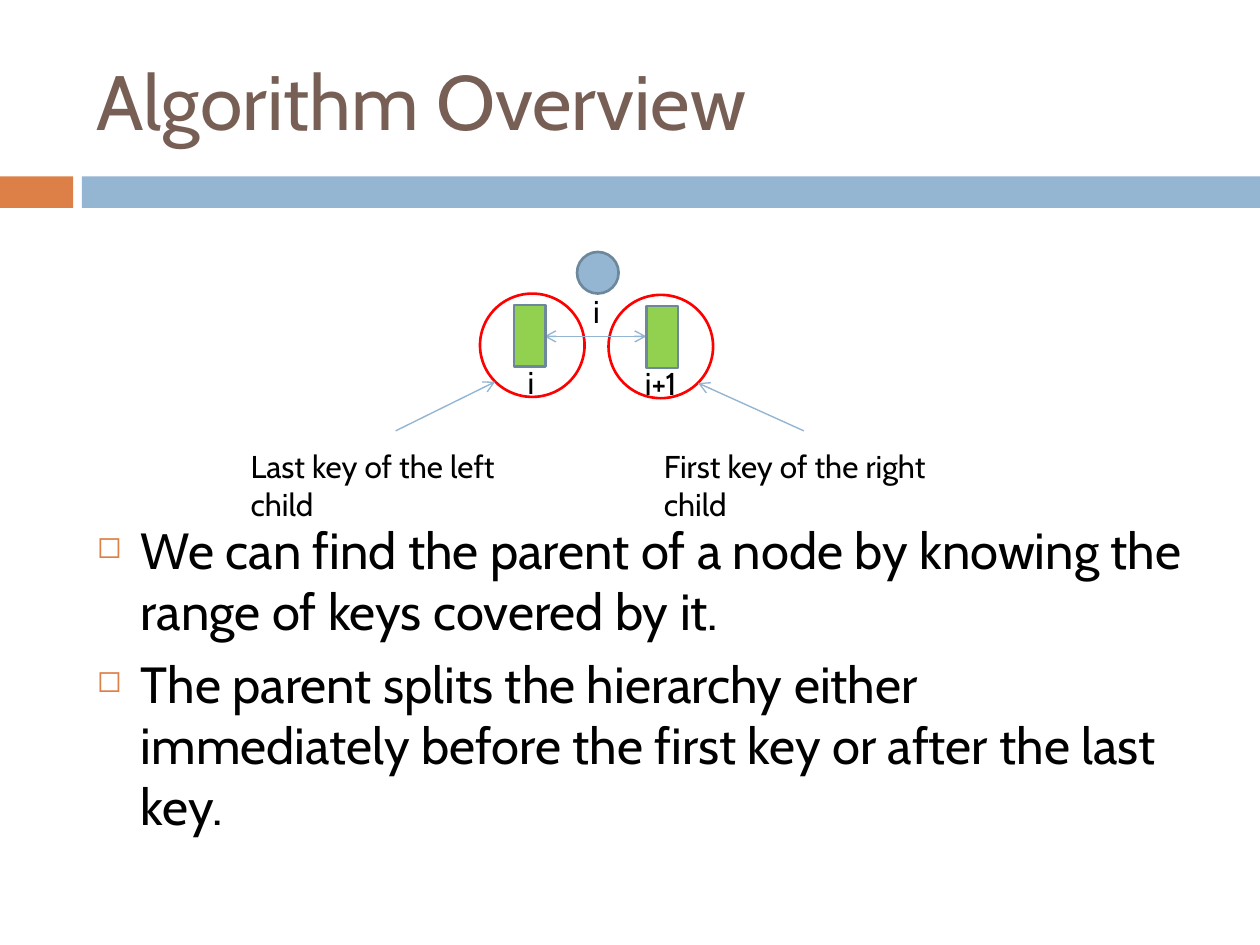
from typing import NamedTuple, Optional

from lxml import etree
from pptx import Presentation
from pptx.dml.color import RGBColor
from pptx.enum import shapes, text
from pptx.oxml.ns import qn
from pptx.util import Inches, Pt

ORANGE = RGBColor(0xDD, 0x80, 0x47)
BLUE = RGBColor(0x94, 0xB6, 0xD2)
SLATE = RGBColor(0x6D, 0x87, 0x9B)
GREEN = RGBColor(0x92, 0xD0, 0x50)
RED = RGBColor(0xFF, 0x00, 0x00)
BROWN = RGBColor(0x77, 0x5F, 0x55)
BLACK = RGBColor(0x00, 0x00, 0x00)

FONT = "Cabin"
RECT = shapes.MSO_SHAPE.RECTANGLE
OVAL = shapes.MSO_SHAPE.OVAL


class Box(NamedTuple):
    left: float
    top: float
    width: float
    height: float


class Figure(NamedTuple):
    kind: shapes.MSO_SHAPE
    box: Box
    fill: Optional[RGBColor] = None
    outline: Optional[RGBColor] = None


class Arrow(NamedTuple):
    start: tuple[float, float]
    end: tuple[float, float]
    ends: tuple[str, ...] = ("tailEnd",)


class Label(NamedTuple):
    words: str
    box: Box
    wrap: bool = False


BANDS = [
    Figure(RECT, Box(0, 1.4, 0.58, 0.25), fill=ORANGE),
    Figure(RECT, Box(0.65, 1.4, 9.35, 0.25), fill=BLUE),
]
KEY_RINGS = [
    Figure(OVAL, Box(3.81, 2.33, 0.83, 0.82), outline=RED),
    Figure(OVAL, Box(4.83, 2.34, 0.83, 0.82), outline=RED),
]
NODES = [
    Figure(OVAL, Box(4.58, 2, 0.33, 0.33), BLUE, SLATE),
    Figure(RECT, Box(4.08, 2.42, 0.25, 0.49), GREEN, SLATE),
    Figure(RECT, Box(5.13, 2.43, 0.25, 0.49), GREEN, SLATE),
]
ARROWS = [
    Arrow((3.14, 3.42), (3.93, 3.03)),
    Arrow((6.38, 3.42), (5.54, 3.04)),
    Arrow((4.32, 2.67), (5.13, 2.67), ("headEnd", "tailEnd")),
]
LABELS = [
    Label("Last key of the left child", Box(1.89, 3.5, 2.61, 0.4), wrap=True),
    Label("First key of the right child", Box(5.17, 3.5, 2.75, 0.4), wrap=True),
    Label("i", Box(4.09, 2.83, 0.26, 0.4)),
    Label("i+1", Box(5.02, 2.84, 0.56, 0.4)),
]
PARENT_LABEL = Label("i", Box(4.67, 2.27, 0.13, 0.4))
POINTS = [
    "We can find the parent of a node by knowing the range of keys covered by it.",
    "The parent splits the hierarchy either immediately before the first key "
    "or after the last key.",
]


def inches(values) -> list:
    return [Inches(value) for value in values]


def add_figure(slide, figure: Figure) -> None:
    shape = slide.shapes.add_shape(figure.kind, *inches(figure.box))
    shape.shadow.inherit = False
    if figure.fill is None:
        shape.fill.background()
    else:
        shape.fill.solid()
        shape.fill.fore_color.rgb = figure.fill
    if figure.outline is None:
        shape.line.fill.background()
    else:
        shape.line.color.rgb = figure.outline
        shape.line.width = Pt(1.5)


def add_arrow(slide, arrow: Arrow) -> None:
    connector = slide.shapes.add_connector(
        shapes.MSO_CONNECTOR.STRAIGHT, *inches(arrow.start + arrow.end))
    connector.line.color.rgb = BLUE
    connector.line.width = Pt(0.79)
    properties = connector._element.spPr
    for end in arrow.ends:
        etree.SubElement(properties.find(qn("a:ln")), qn(f"a:{end}"), type="arrow")
    etree.SubElement(properties, qn("a:effectLst"))


def add_bullet(paragraph) -> None:
    """Hang the paragraph behind a small orange square."""
    properties = paragraph._p.get_or_add_pPr()
    properties.set("marL", str(Inches(0.35)))
    properties.set("indent", str(-Inches(0.35)))
    colour = etree.SubElement(properties, qn("a:buClr"))
    etree.SubElement(colour, qn("a:srgbClr"), val=str(ORANGE))
    etree.SubElement(properties, qn("a:buSzPct"), val="60000")
    etree.SubElement(properties, qn("a:buChar"), char="◻")


def add_text(slide, paragraphs: list[str], box: Box, *, size: float = 18,
             color: RGBColor = BLACK, wrap: bool = True, bullets: bool = False,
             anchor=text.MSO_ANCHOR.TOP, align=text.PP_ALIGN.LEFT,
             space_before: float = 0, side_margin: float = 0.1,
             top_margin: float = 0.05) -> None:
    frame = slide.shapes.add_textbox(*inches(box)).text_frame
    frame.word_wrap = wrap
    frame.vertical_anchor = anchor
    frame.margin_left = frame.margin_right = Inches(side_margin)
    frame.margin_top = Inches(top_margin)
    for index, words in enumerate(paragraphs):
        paragraph = frame.add_paragraph() if index else frame.paragraphs[0]
        paragraph.alignment = align
        paragraph.space_before = Pt(space_before)
        if bullets:
            add_bullet(paragraph)
        run = paragraph.add_run()
        run.text = words
        run.font.name = FONT
        run.font.size = Pt(size)
        run.font.color.rgb = color


def main() -> None:
    deck = Presentation()
    deck.slide_width, deck.slide_height = Inches(10), Inches(7.5)
    slide = deck.slides.add_slide(deck.slide_layouts[6])

    for band in BANDS:
        add_figure(slide, band)
    add_text(slide, ["Algorithm Overview"], Box(0.67, 0.25, 8.92, 1.08),
             size=44, color=BROWN, anchor=text.MSO_ANCHOR.MIDDLE)
    # The top margin leaves room for the diagram above the points.
    add_text(slide, POINTS, Box(0.67, 1.75, 8.92, 5.33), size=29,
             bullets=True, space_before=7, top_margin=2.37)

    for ring in KEY_RINGS:
        add_figure(slide, ring)
    for arrow in ARROWS:
        add_arrow(slide, arrow)
    for label in LABELS:
        add_text(slide, [label.words], label.box, wrap=label.wrap)
    add_text(slide, [PARENT_LABEL.words], PARENT_LABEL.box, wrap=False,
             align=text.PP_ALIGN.CENTER, side_margin=0)
    for node in NODES:
        add_figure(slide, node)

    deck.save("out.pptx")


if __name__ == "__main__":
    main()
